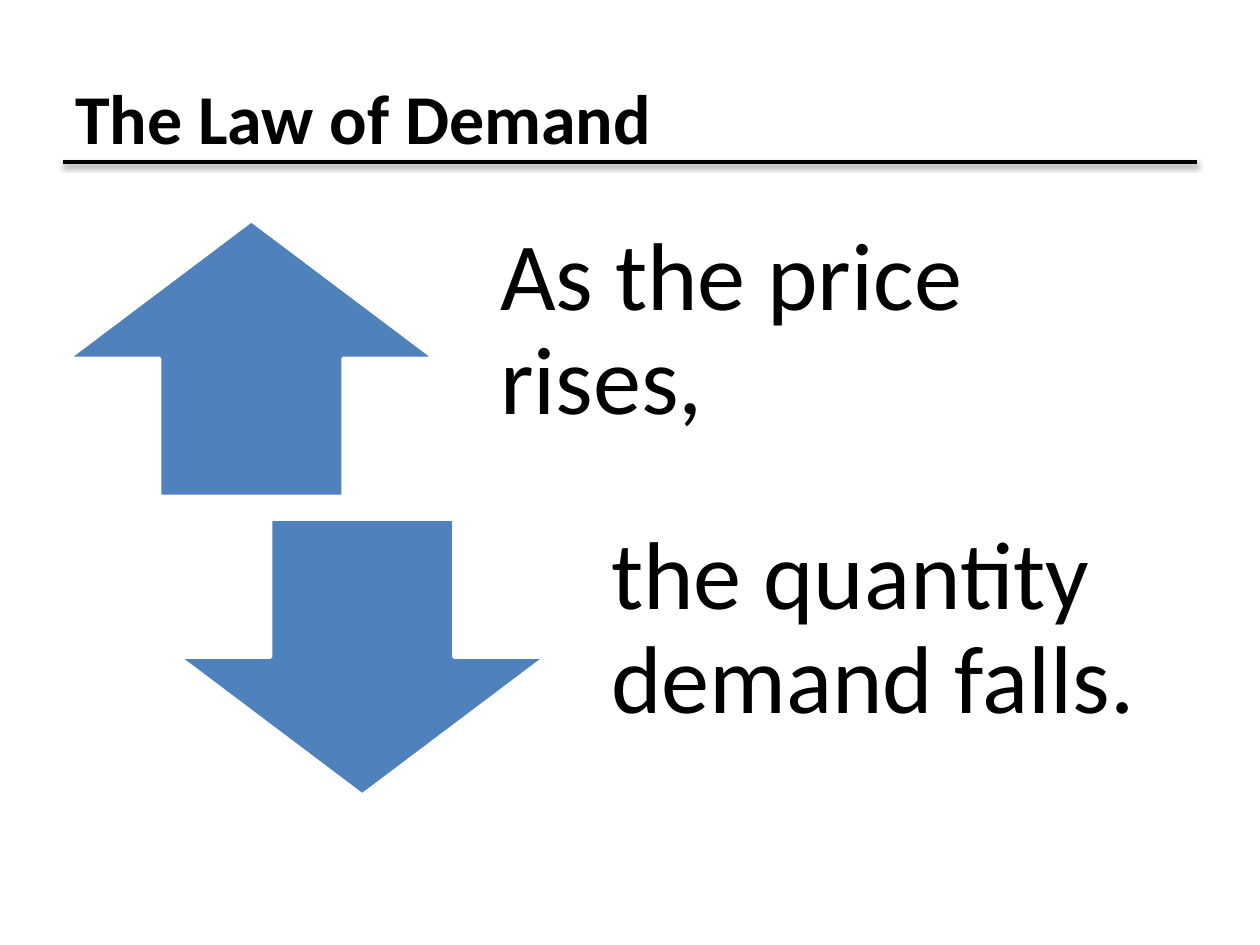
from lxml import etree
from pptx import Presentation, util as u
from pptx.dml.color import RGBColor
from pptx.enum import shapes, text
from pptx.oxml import parse_xml
from pptx.oxml.ns import nsdecls

BLACK = RGBColor(0x00, 0x00, 0x00)
WHITE = RGBColor(0xFF, 0xFF, 0xFF)
BLUE = RGBColor(0x4F, 0x81, 0xBD)

WIDTH, HEIGHT = 10, 7.5
MARGIN = 0.05 * WIDTH
ROW_HEIGHT, ROW_GAP = 2.19, 0.18
ROW_STEP = 0.88  # shift to the right from one row to the next
ARROW_WIDTH, TEXT_WIDTH, COLUMN_GAP = 2.91, 5.04, 0.09
INSET = 0.43


def add_text(page, wording, box, size, bold=False, insets=(0.1, 0.05, 0.1, 0.05),
             line_spacing=None):
    """Place one vertically centred paragraph in box (left, top, width, height)."""
    holder = page.shapes.add_textbox(*map(u.Inches, box))
    frame = holder.text_frame
    frame.word_wrap = True
    frame.vertical_anchor = text.MSO_ANCHOR.MIDDLE
    (frame.margin_left, frame.margin_top,
     frame.margin_right, frame.margin_bottom) = map(u.Inches, insets)
    para = frame.paragraphs[0]
    para.alignment = text.PP_ALIGN.LEFT
    if line_spacing:
        para.line_spacing = line_spacing
    span = para.add_run()
    span.text = wording
    span.font.name = "Calibri"
    span.font.size = u.Pt(size)
    span.font.bold = bold
    span.font.color.rgb = BLACK


def add_shadow(connector):
    """Give a line a soft shadow that falls straight down."""
    effects = parse_xml(f"<a:effectLst {nsdecls('a')}/>")
    shadow = etree.SubElement(effects, effects.tag.replace("effectLst", "outerShdw"),
                              blurRad="40000", dist="20000", dir="5400000",
                              rotWithShape="0")
    color = etree.SubElement(shadow, effects.tag.replace("effectLst", "srgbClr"),
                             val="000000")
    etree.SubElement(color, effects.tag.replace("effectLst", "alpha"), val="38000")
    connector._element.spPr.append(effects)


def add_heading(page, wording, box):
    """Title with a shadowed rule under it."""
    left, top, width, height = box
    rule_y = top + 0.79 * height
    rule = page.shapes.add_connector(
        shapes.MSO_CONNECTOR.STRAIGHT,
        *map(u.Inches, (left, rule_y, left + width, rule_y)))
    rule.line.color.rgb = BLACK
    rule.line.width = u.Pt(2)
    add_shadow(rule)
    add_text(page, wording, box, 40, bold=True)


def add_arrow_row(page, direction, wording, left, top):
    """Block arrow with its statement to the right."""
    arrow = page.shapes.add_shape(
        direction, *map(u.Inches, (left, top, ARROW_WIDTH, ROW_HEIGHT)))
    arrow.shadow.inherit = False
    arrow.fill.solid()
    arrow.fill.fore_color.rgb = BLUE
    arrow.line.color.rgb = WHITE
    arrow.line.width = u.Pt(2)
    text_left = left + ARROW_WIDTH + COLUMN_GAP
    add_text(page, wording, (text_left, top, TEXT_WIDTH, ROW_HEIGHT), 55,
             insets=(INSET, 0, INSET, INSET), line_spacing=0.9)


def main():
    deck = Presentation()
    deck.slide_width, deck.slide_height = u.Inches(WIDTH), u.Inches(HEIGHT)
    page = deck.slides.add_slide(deck.slide_layouts[6])

    add_heading(page, "The Law of Demand",
                (MARGIN, 0.04 * HEIGHT, WIDTH - 2 * MARGIN, HEIGHT / 6))

    # Staggered rows: price up, quantity down
    rows = [
        (shapes.MSO_SHAPE.UP_ARROW, "As the price rises,"),
        (shapes.MSO_SHAPE.DOWN_ARROW, "the quantity demand falls."),
    ]
    for index, (direction, wording) in enumerate(rows):
        add_arrow_row(page, direction, wording, 0.54 + index * ROW_STEP,
                      1.75 + index * (ROW_HEIGHT + ROW_GAP))

    deck.save("out.pptx")


if __name__ == "__main__":
    main()
